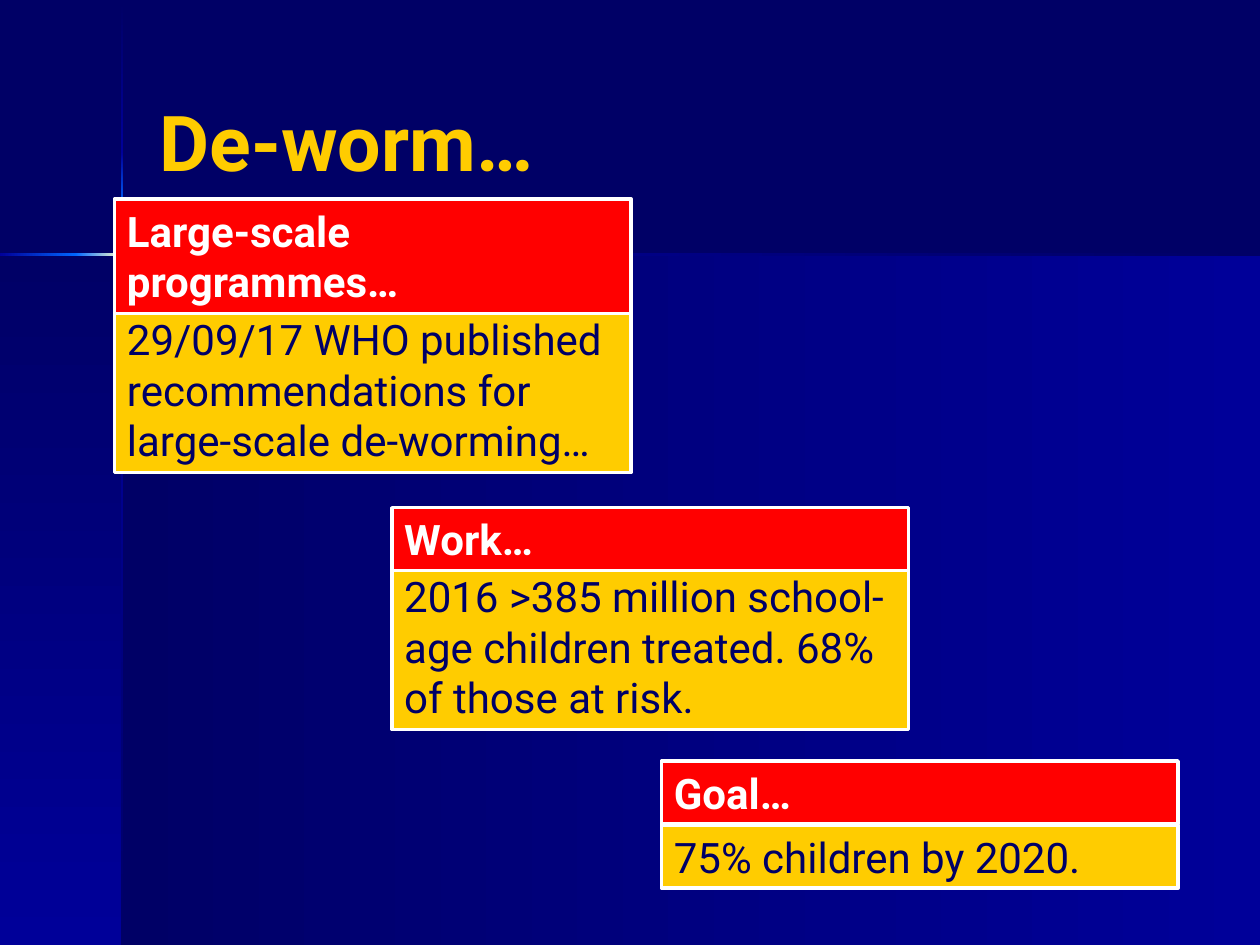
import copy

import pptx
import pptx.dml.color
import pptx.enum.shapes
import pptx.enum.text
import pptx.util

NAVY, BLUE, BRIGHT, CREAM = "000066", "000099", "0066FF", "FFFFCC"
GOLD, RED, WHITE = "FFCC00", "FF0000", "FFFFFF"
RIGHTWARD, DOWNWARD = 0, 270


def color(value):
    return pptx.dml.color.RGBColor.from_string(value)


class Painter:
    """Draws styled elements on one page, placed on a grid of 100 columns by 75 rows."""

    font = "Roboto"
    columns, rows = 100, 75

    def __init__(self, deck):
        self.deck = deck
        self.page = deck.slides.add_slide(deck.slide_layouts[6])
        self.page.background.fill.solid()
        self.page.background.fill.fore_color.rgb = color(NAVY)

    def place(self, left, top, width, height):
        across = self.deck.slide_width / self.columns
        down = self.deck.slide_height / self.rows
        return [round(length) for length in (left * across, top * down, width * across, height * down)]

    def rectangle(self, parent, area):
        kind = pptx.enum.shapes.MSO_SHAPE.RECTANGLE
        box = parent.shapes.add_shape(kind, *self.place(*area))
        box.shadow.inherit = False
        return box

    def gradient(self, area, direction, *shades):
        box = self.rectangle(self.page, area)
        box.line.fill.background()
        box.fill.gradient()
        box.fill.gradient_angle = direction
        stops = box._element.spPr.xpath("./a:gradFill/a:gsLst")[0]
        while len(stops) < len(shades):
            stops.append(copy.deepcopy(stops[-1]))
        for index, (stop, shade) in enumerate(zip(box.fill.gradient_stops, shades)):
            stop.position = index / (len(shades) - 1)
            stop.color.rgb = color(shade)

    def label(self, box, text, size, ink, bold, anchor):
        frame = box.text_frame
        frame.word_wrap = True
        frame.vertical_anchor = anchor
        para = frame.paragraphs[0]
        para.text = text
        para.alignment = pptx.enum.text.PP_ALIGN.LEFT
        para.font.name = self.font
        para.font.size = pptx.util.Pt(size)
        para.font.bold = bold
        para.font.color.rgb = color(ink)

    def title(self, area, text):
        box = self.page.shapes.add_textbox(*self.place(*area))
        self.label(box, text, 44, GOLD, True, pptx.enum.text.MSO_ANCHOR.MIDDLE)

    def panel(self, parent, area, text, fill, ink, bold):
        box = self.rectangle(parent, area)
        box.fill.solid()
        box.fill.fore_color.rgb = color(fill)
        box.line.color.rgb = color(WHITE)
        box.line.width = pptx.util.Pt(2)
        self.label(box, text, 24, ink, bold, pptx.enum.text.MSO_ANCHOR.TOP)
        box.text_frame.auto_size = pptx.enum.text.MSO_AUTO_SIZE.SHAPE_TO_FIT_TEXT

    def card(self, left, header_rows, body_rows, heading, body):
        group = self.page.shapes.add_group_shape()
        self.panel(group, (left, body_rows[0], 41, body_rows[1]), body, GOLD, NAVY, False)
        self.panel(group, (left, header_rows[0], 41, header_rows[1]), heading, RED, WHITE, True)


def main():
    deck = pptx.Presentation()
    deck.slide_width = pptx.util.Inches(10)
    deck.slide_height = pptx.util.Inches(7.5)
    painter = Painter(deck)

    painter.gradient((9.7, 20.2, 90.3, 54.8), RIGHTWARD, NAVY, BLUE)
    painter.gradient((0, 20.2, 9.7, 54.8), DOWNWARD, NAVY, BLUE)
    for top, height, *shades in (
        (0.1, 12, NAVY, BLUE),
        (28.2, 46.8, BLUE, NAVY),
        (23.8, 4.4, BRIGHT, BLUE),
        (12.1, 4.4, BLUE, BRIGHT),
    ):
        painter.gradient((9.6, top, 0.2, height), DOWNWARD, *shades)
    for left, width, *shades in (
        (17.7, 82.3, BLUE, NAVY),
        (0, 6.1, BLUE, BRIGHT),
        (6, 7.3, BRIGHT, CREAM, BRIGHT),
    ):
        painter.gradient((left, 20.1, width, 0.2), RIGHTWARD, *shades)

    painter.title((11.7, 3.3, 82.5, 15.7), "De-worm…")
    painter.card(9.1, (15.8, 9.1), (24.4, 13.1), "Large-scale programmes…",
                 "29/09/17 WHO published recommendations for large-scale de-worming…")
    painter.card(52.5, (60.4, 5), (65.5, 5), "Goal…", "75% children by 2020.")
    painter.card(31.1, (40.3, 5), (44.8, 13.1), "Work…",
                 "2016 >385 million school-age children treated. 68% of those at risk.")
    deck.save("out.pptx")


if __name__ == "__main__":
    main()
